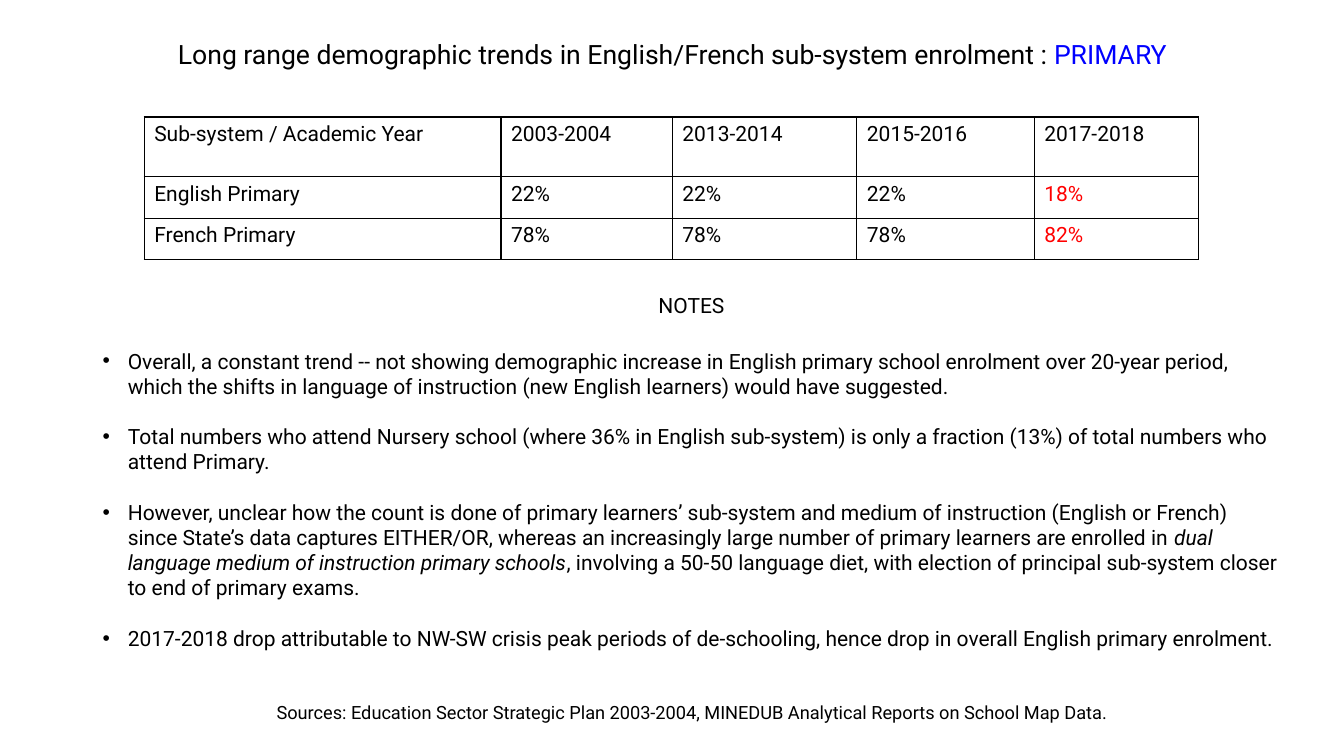
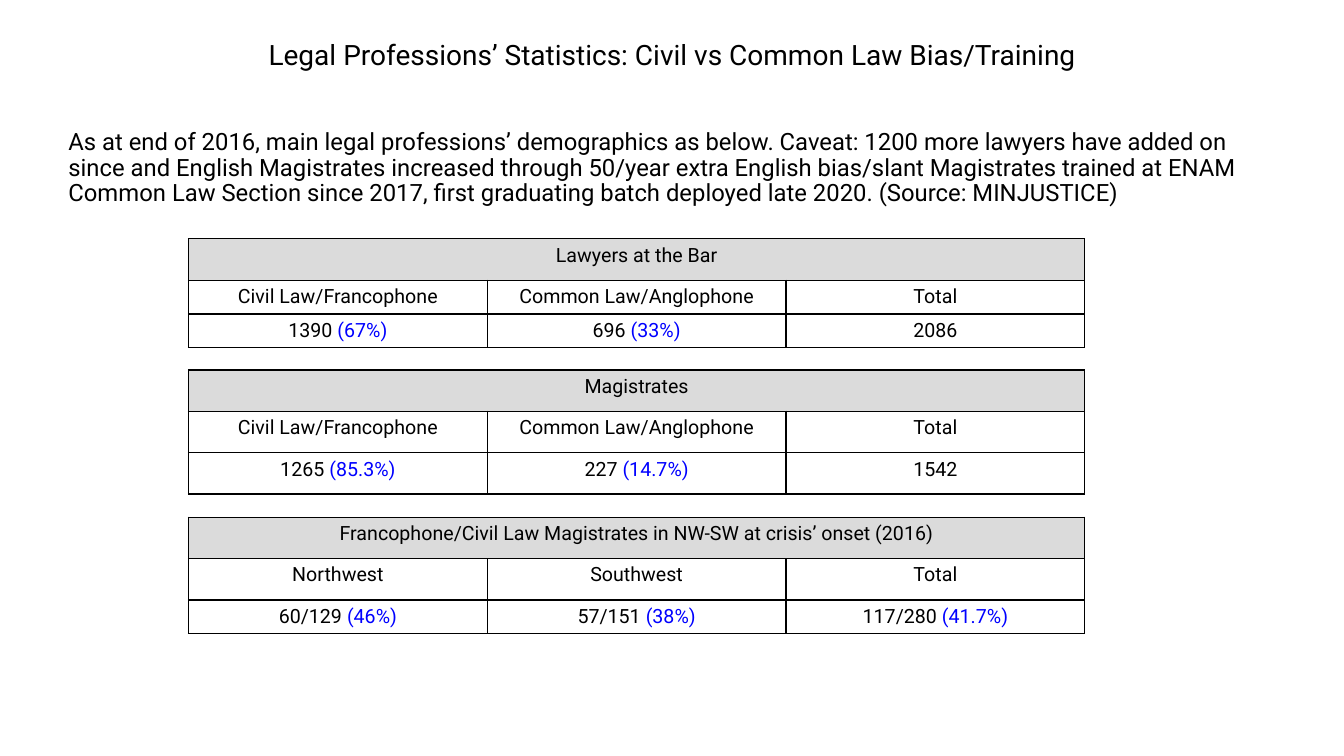
from dataclasses import dataclass

from lxml import etree
from pptx import Presentation
from pptx.dml.color import RGBColor as RGB
from pptx.enum.text import MSO_ANCHOR as ANCHOR, PP_ALIGN as ALIGN
from pptx.oxml import parse_xml
from pptx.oxml.ns import nsdecls, qn
from pptx.util import Inches, Pt


@dataclass(frozen=True)
class Theme:
    font: str = "Roboto"
    ink: str = "000000"
    blue: str = "0000FF"
    red: str = "FF0000"
    band: str = "DBDBDB"
    trend_title: int = 19
    legal_title: int = 20
    intro: int = 17
    body: int = 15
    cell: int = 14
    source: int = 13


@dataclass
class Para:
    size: int
    texts: list
    align: ALIGN = ALIGN.LEFT
    spacing: float = 1.0
    before: int = 0
    bullet: bool = False


T = Theme()
CENTER, LEFT = ALIGN.CENTER, ALIGN.LEFT

prs = Presentation()
prs.slide_width, prs.slide_height = Inches(13.33), Inches(7.5)
COL, ROW = prs.slide_width / 100, prs.slide_height / 100


def write(p, size, texts):
    """Fill a paragraph with runs: plain text, or (text, colour, italic)."""
    p.text = ""
    for item in texts:
        text, colour, italic = (item, T.ink, False) if isinstance(item, str) else item
        r = p.add_run()
        r.text = text
        r.font.name, r.font.size, r.font.italic = T.font, Pt(size), italic
        r.font.color.rgb = RGB.from_string(colour)


def add_grid(s, left, top, widths, heights, cells, size, align, banner=False):
    """Add a ruled table; a banner is a shaded first row merged across."""
    frame = s.shapes.add_table(len(heights), len(widths), int(left * COL), int(top * ROW),
                               int(sum(widths) * COL), int(sum(heights) * ROW))
    table = frame.table
    table.first_row = table.horz_banding = False
    for column, width in zip(table.columns, widths):
        column.width = int(width * COL)
    for row, height in zip(table.rows, heights):
        row.height = int(height * ROW)
    if banner:
        table.cell(0, 0).merge(table.cell(0, len(widths) - 1))
    for i in range(len(heights)):
        for j in range(len(widths)):
            cell = table.cell(i, j)
            if banner and i == 0:
                cell.fill.solid()
                cell.fill.fore_color.rgb = RGB.from_string(T.band)
            else:
                cell.fill.background()
            for k, side in enumerate(("lnL", "lnR", "lnT", "lnB")):
                cell._tc.get_or_add_tcPr().insert(k, parse_xml(
                    f'<a:{side} {nsdecls("a")} w="{Pt(1)}"><a:solidFill>'
                    f'<a:srgbClr val="{T.ink}"/></a:solidFill></a:{side}>'))
            if j < len(cells[i]):
                p = cell.text_frame.paragraphs[0]
                p.alignment = align
                write(p, size, cells[i][j])


trends, legal = [prs.slides.add_slide(prs.slide_layouts[6]) for _ in range(2)]

titles = [
    (trends, T.trend_title,
     ["Long range demographic trends in English/French sub-system enrolment : ",
      ("PRIMARY", T.blue, False)]),
    (legal, T.legal_title,
     ["Legal Professions’ Statistics: Civil vs Common Law Bias/Training"]),
]
bullets = [
    ["Overall, a constant trend -- not showing demographic increase in English primary "
     "school enrolment over 20-year period, which the shifts in language of instruction "
     "(new English learners) would have suggested."],
    ["Total numbers who attend Nursery school (where 36% in English sub-system) is only "
     "a fraction (13%) of total numbers who attend Primary."],
    ["However, unclear how the count is done of primary learners’ sub-system and medium "
     "of instruction (English or French) since State’s data captures EITHER/OR, whereas "
     "an increasingly large number of primary learners are enrolled in ",
     ("dual language medium of instruction primary schools", T.ink, True),
     ", involving a 50-50 language diet, with election of principal sub-system closer "
     "to end of primary exams."],
    ["2017-2018 drop attributable to NW-SW crisis peak periods of de-schooling, hence "
     "drop in overall English primary enrolment."],
]
notes = [Para(T.body, ["NOTES"], CENTER)]
notes += [Para(T.body, texts, before=18 if i else 22, bullet=True)
          for i, texts in enumerate(bullets)]
notes.append(Para(T.source, ["Sources: Education Sector Strategic Plan 2003-2004, "
                             "MINEDUB Analytical Reports on School Map Data."],
                  CENTER, before=36))
intro = [Para(T.intro, [
    "As at end of 2016, main legal professions’ demographics as below. Caveat: 1200 more "
    "lawyers have added on since and English Magistrates increased through 50/year extra "
    "English bias/slant Magistrates trained at ENAM Common Law Section since 2017, first "
    "graduating batch deployed late 2020. (Source: MINJUSTICE)"], spacing=0.9)]

# Text boxes: slide, left, top, width, height, anchor, paragraphs
boxes = [(s, 6.9, 3.47, 86.25, 7.87, ANCHOR.MIDDLE, [Para(size, texts, CENTER, 0.9)])
         for s, size, texts in titles]
boxes += [(trends, 6.9, 38, 89.1, 60, ANCHOR.TOP, notes),
          (legal, 4.35, 16.53, 89.95, 13, ANCHOR.TOP, intro)]
for s, left, top, width, height, anchor, paras in boxes:
    tf = s.shapes.add_textbox(int(left * COL), int(top * ROW),
                              int(width * COL), int(height * ROW)).text_frame
    tf.word_wrap, tf.vertical_anchor = True, anchor
    for i, para in enumerate(paras):
        p = tf.add_paragraph() if i else tf.paragraphs[0]
        write(p, para.size, para.texts)
        p.alignment, p.line_spacing = para.align, para.spacing
        p.space_before = Pt(para.before)
        if para.bullet:
            pPr = p._p.get_or_add_pPr()
            pPr.set("marL", str(Inches(0.25)))
            pPr.set("indent", str(-Inches(0.25)))
            etree.SubElement(pPr, qn("a:buFont")).set("typeface", "Arial")
            etree.SubElement(pPr, qn("a:buChar")).set("char", "•")

# Enrolment table
enrolment = [[[text] for text in row] for row in (
    ("Sub-system / Academic Year", "2003-2004", "2013-2014", "2015-2016", "2017-2018"),
    ("English Primary", "22%", "22%", "22%", ("18%", T.red, False)),
    ("French Primary", "78%", "78%", "78%", ("82%", T.red, False)))]
add_grid(trends, 10.73, 15.47, (26.55, 12.75, 13.73, 13.2, 12.23), (7.93, 5.47, 5.47),
         enrolment, T.body, LEFT)

# Legal profession tables, stacked with equal gaps
TALL, SHORT, GAP = 5.47, 4.4, 3.07
by_law = ("Civil Law/Francophone", "Common Law/Anglophone", "Total")
by_region = ("Northwest", "Southwest", "Total")
professions = [
    ("Lawyers at the Bar", by_law, (TALL, SHORT, SHORT),
     (("1390 ", "(67%)"), ("696 ", "(33%)"), ("2086",))),
    ("Magistrates", by_law, (TALL, TALL, TALL),
     (("1265 ", "(85.3%)"), ("227 ", "(14.7%)"), ("1542",))),
    ("Francophone/Civil Law Magistrates in NW-SW at crisis’ onset (2016)", by_region,
     (TALL, TALL, SHORT),
     (("60/129 ", "(46%)"), ("57/151 ", "(38%)"), ("117/280 ", "(41.7%)"))),
]
top = 31.6
for banner, heads, heights, counts in professions:
    values = [[count] + [(share, T.blue, False) for share in shares]
              for count, *shares in counts]
    add_grid(legal, 14.03, top, (22.23,) * 3, heights,
             [[[banner]], [[head] for head in heads], values], T.cell, CENTER, True)
    top += sum(heights) + GAP

prs.save("out.pptx")
